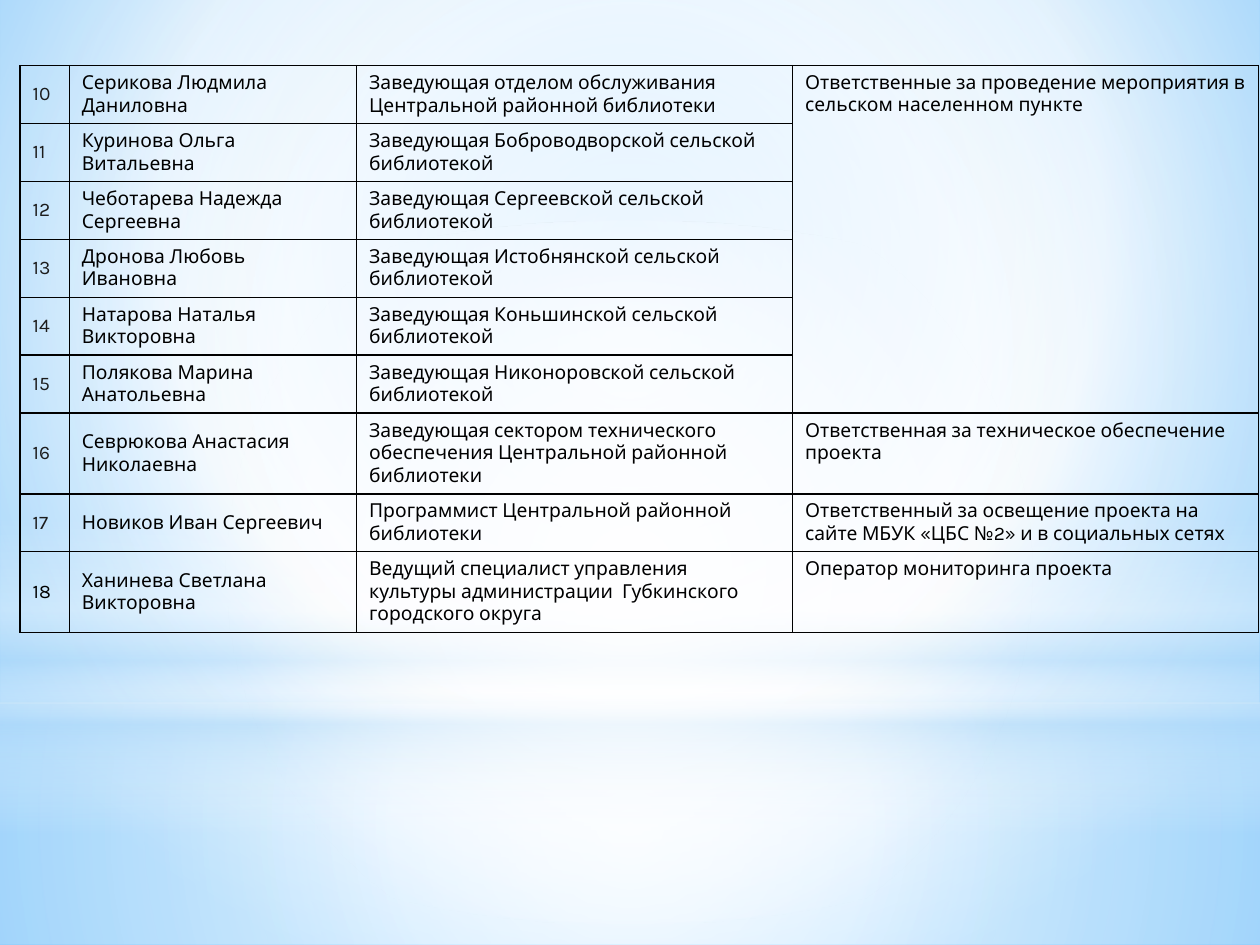
import dataclasses
import typing

import lxml.etree
import pptx
import pptx.dml.color
import pptx.enum.shapes
import pptx.enum.text
import pptx.oxml.ns
import pptx.util

Inches = pptx.util.Inches
Pt = pptx.util.Pt
qn = pptx.oxml.ns.qn
SHAPES = pptx.enum.shapes.MSO_SHAPE
ANCHORS = pptx.enum.text.MSO_ANCHOR

COLORS = {
    "white": "FFFFFF",
    "pale": "B4DCFA",
    "sky": "9ED5FF",
    "blue": "5BB9FF",
    "number": "1C1C1C",
    "black": "000000",
}
COLUMN_WIDTHS = (0.39, 2.28, 3.46, 3.7)
TWO_LINES, THREE_LINES = 0.46, 0.64
CENTER = (50, 50, 50, 50)


class Stop(typing.NamedTuple):
    position: int
    color: str
    alpha: int = 100


@dataclasses.dataclass
class Glow:
    preset: SHAPES
    top: float
    height: float
    stops: tuple[Stop, ...]
    focus: tuple[int, ...] | None = CENTER


@dataclasses.dataclass
class Member:
    name: str
    post: str
    duty: str = ""
    height: float = TWO_LINES
    number_color: str = "number"


BACKGROUND_STOPS = (Stop(0, "sky"), Stop(60, "white"), Stop(100, "blue"))
GLOWS = (
    Glow(SHAPES.RECTANGLE, 5.58, 1.92,
         (Stop(0, "white", 91), Stop(37, "white", 76), Stop(100, "pale", 79))),
    Glow(SHAPES.RECTANGLE, 0, 5.58,
         (Stop(0, "white", 89), Stop(48, "white", 62), Stop(100, "pale", 79))),
    Glow(SHAPES.RECTANGLE, 4.12, 2.5,
         (Stop(0, "white", 0), Stop(29, "white", 30), Stop(45, "pale", 40),
          Stop(55, "white", 26), Stop(65, "pale", 60), Stop(100, "white", 0)), None),
    Glow(SHAPES.OVAL, 1.75, 5.58, (Stop(0, "white"), Stop(56, "white", 0))),
)
FIRST_NUMBER = 10
VILLAGE_ROWS = 6
MEMBERS = (
    Member("Серикова Людмила Даниловна",
           "Заведующая отделом обслуживания Центральной районной библиотеки",
           "Ответственные за проведение мероприятия в сельском населенном пункте"),
    Member("Куринова Ольга Витальевна", "Заведующая Боброводворской сельской библиотекой"),
    Member("Чеботарева Надежда Сергеевна", "Заведующая Сергеевской сельской библиотекой"),
    Member("Дронова Любовь Ивановна", "Заведующая Истобнянской сельской библиотекой"),
    Member("Натарова Наталья Викторовна", "Заведующая Коньшинской сельской библиотекой"),
    Member("Полякова Марина Анатольевна", "Заведующая Никоноровской сельской библиотекой"),
    Member("Севрюкова Анастасия Николаевна",
           "Заведующая сектором технического обеспечения Центральной районной библиотеки",
           "Ответственная за техническое обеспечение проекта", THREE_LINES),
    Member("Новиков Иван Сергеевич", "Программист Центральной районной библиотеки",
           "Ответственный за освещение проекта на сайте МБУК «ЦБС №2» и в социальных сетях"),
    Member("Ханинева Светлана Викторовна",
           "Ведущий специалист управления культуры администрации  Губкинского городского округа",
           "Оператор мониторинга проекта", THREE_LINES, "black"),
)


def add_child(parent, tag: str, **attributes):
    return lxml.etree.SubElement(
        parent, qn(tag), {key: str(value) for key, value in attributes.items()})


def set_gradient(fill, owner, stops: tuple[Stop, ...], focus: tuple[int, ...] | None) -> None:
    fill.gradient()
    gradient = next(owner.iter(qn("a:gradFill")))
    for child in list(gradient):
        gradient.remove(child)
    stop_list = add_child(gradient, "a:gsLst")
    for stop in stops:
        entry = add_child(stop_list, "a:gs", pos=stop.position * 1000)
        color = add_child(entry, "a:srgbClr", val=COLORS[stop.color])
        if stop.alpha < 100:
            add_child(color, "a:alpha", val=stop.alpha * 1000)
    if focus is None:
        add_child(gradient, "a:lin", ang=90 * 60000, scaled=0)
    else:
        circle = add_child(gradient, "a:path", path="circle")
        sides = {side: value * 1000 for side, value in zip("ltrb", focus)}
        add_child(circle, "a:fillToRect", **sides)


def add_glow(slide, glow: Glow) -> None:
    shape = slide.shapes.add_shape(
        glow.preset, 0, Inches(glow.top), Inches(10), Inches(glow.height))
    shape.shadow.inherit = False
    shape.line.fill.background()
    set_gradient(shape.fill, shape.element, glow.stops, glow.focus)


def write_text(cell, text: str, *, color: str = "black", anchor=ANCHORS.MIDDLE,
               size: float = 11, font: str = "Karla") -> None:
    cell.vertical_anchor = anchor
    paragraph = cell.text_frame.paragraphs[0]
    paragraph.text = text
    paragraph.font.size = Pt(size)
    paragraph.font.name = font
    paragraph.font.color.rgb = pptx.dml.color.RGBColor.from_string(COLORS[color])


def format_cell(cell) -> None:
    properties = cell._tc.get_or_add_tcPr()
    for side in "LRTB":
        border = add_child(properties, f"a:ln{side}", w=Pt(1))
        add_child(add_child(border, "a:solidFill"), "a:srgbClr", val=COLORS["black"])
    cell.fill.background()


def add_team_table(slide) -> None:
    frame = slide.shapes.add_table(
        len(MEMBERS), len(COLUMN_WIDTHS), Inches(0.16), Inches(0.52),
        Inches(sum(COLUMN_WIDTHS)), Inches(sum(member.height for member in MEMBERS)))
    table = frame.table
    table.first_row = table.horz_banding = False
    for column, width in zip(table.columns, COLUMN_WIDTHS):
        column.width = Inches(width)
    for row, member in zip(table.rows, MEMBERS):
        row.height = Inches(member.height)
    for cell in table.iter_cells():
        format_cell(cell)
    for index, member in enumerate(MEMBERS):
        write_text(table.cell(index, 0), str(FIRST_NUMBER + index), color=member.number_color)
        write_text(table.cell(index, 1), member.name)
        write_text(table.cell(index, 2), member.post)
        if member.duty:
            write_text(table.cell(index, 3), member.duty, anchor=ANCHORS.TOP)
    table.cell(0, 3).merge(table.cell(VILLAGE_ROWS - 1, 3))


def main() -> None:
    presentation = pptx.Presentation()
    presentation.slide_width = Inches(10)
    presentation.slide_height = Inches(7.5)
    slide = presentation.slides.add_slide(presentation.slide_layouts[6])
    set_gradient(slide.background.fill, slide.element, BACKGROUND_STOPS, (20, 10, 20, 60))
    for glow in GLOWS:
        add_glow(slide, glow)
    add_team_table(slide)
    presentation.save("out.pptx")


if __name__ == "__main__":
    main()
